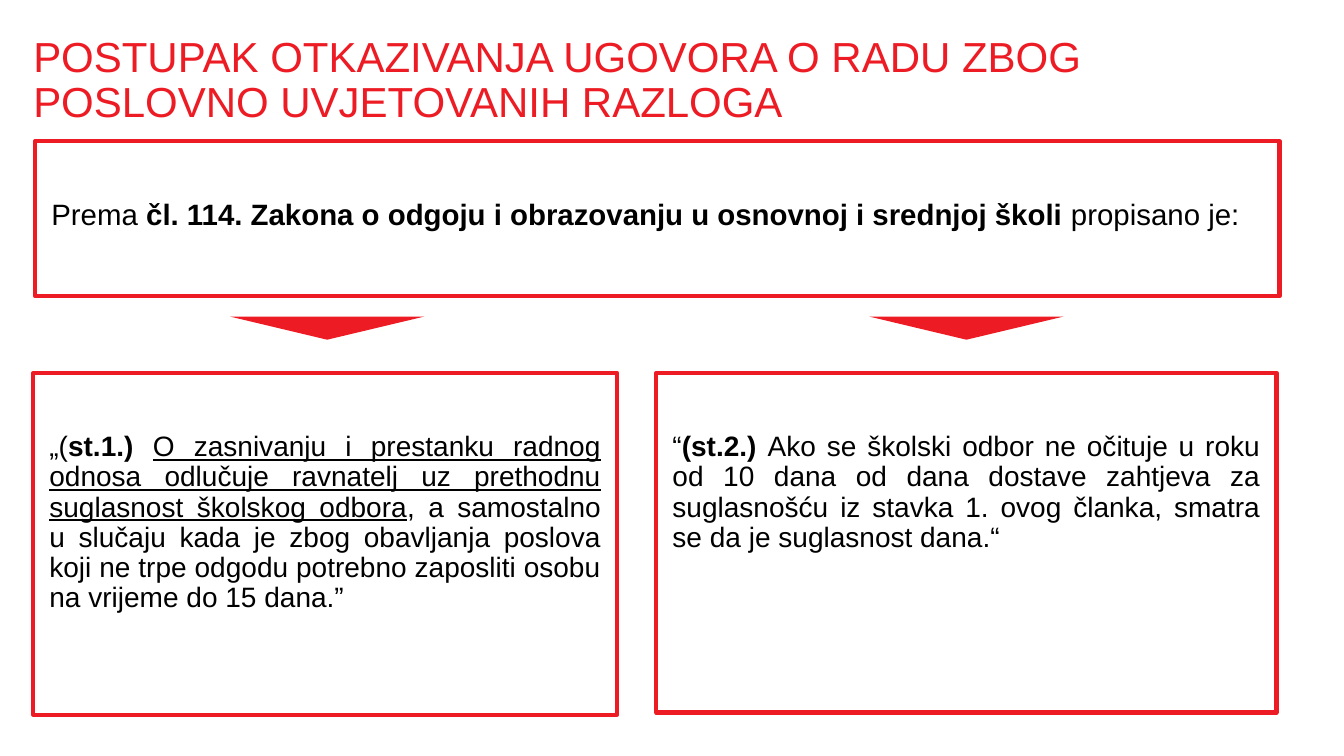
import dataclasses
import typing

import pptx
import pptx.dml.color
import pptx.enum.shapes
import pptx.enum.text
import pptx.util

EMU_PER_PX = 9144
Align = pptx.enum.text.PP_ALIGN
Preset = pptx.enum.shapes.MSO_SHAPE


@dataclasses.dataclass(frozen=True)
class Theme:
    red: pptx.dml.color.RGBColor = pptx.dml.color.RGBColor(0xED, 0x1C, 0x24)
    white: pptx.dml.color.RGBColor = pptx.dml.color.RGBColor(0xFF, 0xFF, 0xFF)
    black: pptx.dml.color.RGBColor = pptx.dml.color.RGBColor(0, 0, 0)
    font: str = "Arial"
    heading_size: int = 30
    law_size: int = 21
    clause_size: int = 20
    border: int = 3
    line_spacing: float = 0.9


class Area(typing.NamedTuple):
    left: int
    top: int
    width: int
    height: int


class Phrase(typing.NamedTuple):
    text: str
    bold: bool = False
    underline: bool = False


@dataclasses.dataclass(frozen=True)
class Provision:
    area: Area
    phrases: tuple[Phrase, ...]
    size: int
    align: Align


THEME = Theme()
HEADING = "POSTUPAK OTKAZIVANJA UGOVORA O RADU ZBOG POSLOVNO UVJETOVANIH RAZLOGA"
HEADING_AREA = Area(33, 36, 1236, 91)
PROVISION_INSETS = (16, 59, 16, 5)
NO_INSETS = (0, 0, 0, 0)

PROVISIONS = (
    Provision(
        Area(35, 140, 1234, 154),
        (
            Phrase("Prema "),
            Phrase("čl. 114. Zakona o odgoju i obrazovanju u osnovnoj i srednjoj školi", bold=True),
            Phrase(" propisano je:"),
        ),
        THEME.law_size,
        Align.LEFT,
    ),
    Provision(
        Area(33, 370, 579, 339),
        (
            Phrase("„("),
            Phrase("st.1.) ", bold=True),
            Phrase(
                "O zasnivanju i prestanku radnog odnosa odlučuje ravnatelj "
                "uz prethodnu suglasnost školskog odbora",
                underline=True,
            ),
            Phrase(
                ", a samostalno u slučaju kada je zbog obavljanja poslova koji ne trpe "
                "odgodu potrebno zaposliti osobu na vrijeme do 15 dana.”"
            ),
        ),
        THEME.clause_size,
        Align.JUSTIFY,
    ),
    Provision(
        Area(651, 370, 615, 337),
        (
            Phrase("“"),
            Phrase("(st.2.) ", bold=True),
            Phrase(
                "Ako se školski odbor ne očituje u roku od 10 dana od dana dostave zahtjeva "
                "za suglasnošću iz stavka 1. ovog članka, smatra se da je suglasnost dana.“"
            ),
        ),
        THEME.clause_size,
        Align.JUSTIFY,
    ),
)
POINTERS = tuple(Area(left, 314, 193, 23) for left in (228, 862))


def px(length: int) -> pptx.util.Emu:
    return pptx.util.Emu(length * EMU_PER_PX)


def write(frame, phrases: tuple[Phrase, ...], insets: tuple[int, int, int, int],
          size: int, color: pptx.dml.color.RGBColor, align: Align) -> None:
    frame.word_wrap = True
    frame.auto_size = pptx.enum.text.MSO_AUTO_SIZE.NONE
    frame.vertical_anchor = pptx.enum.text.MSO_ANCHOR.TOP
    frame.margin_left, frame.margin_top, frame.margin_right, frame.margin_bottom = map(px, insets)
    paragraph = frame.paragraphs[0]
    paragraph.alignment = align
    paragraph.line_spacing = THEME.line_spacing
    paragraph.font.name = THEME.font
    paragraph.font.size = pptx.util.Pt(size)
    paragraph.font.color.rgb = color
    for phrase in phrases:
        run = paragraph.add_run()
        run.text = phrase.text
        if phrase.bold:
            run.font.bold = True
        if phrase.underline:
            run.font.underline = True


def add_filled(slide, preset: Preset, area: Area, fill: pptx.dml.color.RGBColor):
    figure = slide.shapes.add_shape(preset, *map(px, area))
    figure.shadow.inherit = False
    figure.fill.solid()
    figure.fill.fore_color.rgb = fill
    return figure


def add_provision(slide, provision: Provision) -> None:
    panel = add_filled(slide, Preset.RECTANGLE, provision.area, THEME.white)
    panel.line.color.rgb = THEME.red
    panel.line.width = pptx.util.Pt(THEME.border)
    write(panel.text_frame, provision.phrases, PROVISION_INSETS,
          provision.size, THEME.black, provision.align)


def add_pointer(slide, area: Area) -> None:
    pointer = add_filled(slide, Preset.ISOSCELES_TRIANGLE, area, THEME.red)
    pointer.line.fill.background()
    pointer.rotation = 180


def add_heading(slide) -> None:
    heading = slide.shapes.title
    heading.left, heading.top, heading.width, heading.height = map(px, HEADING_AREA)
    write(heading.text_frame, (Phrase(HEADING),), NO_INSETS,
          THEME.heading_size, THEME.red, Align.LEFT)


def main() -> None:
    presentation = pptx.Presentation()
    presentation.slide_width = px(1333)
    presentation.slide_height = px(750)
    slide = presentation.slides.add_slide(presentation.slide_layouts.get_by_name("Title Only"))
    add_heading(slide)
    for provision in PROVISIONS:
        add_provision(slide, provision)
    for area in POINTERS:
        add_pointer(slide, area)
    presentation.save("out.pptx")


if __name__ == "__main__":
    main()
